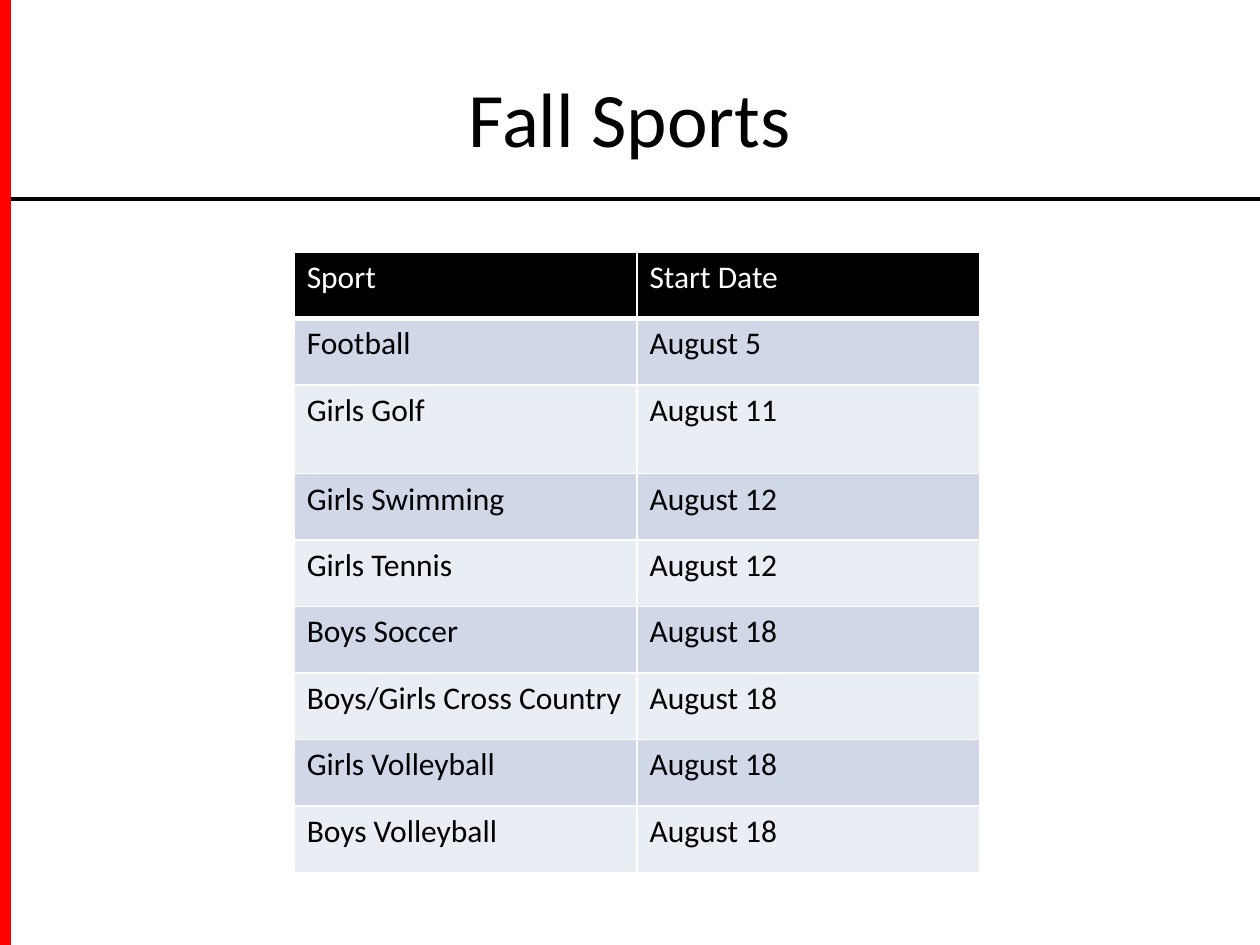
import pptx
import pptx.dml.color
import pptx.enum.shapes
import pptx.enum.text
import pptx.oxml
import pptx.oxml.ns
import pptx.util
from pptx.util import Cm

COLORS = {"black": "000000", "white": "FFFFFF", "red": "FF0000",
          "band_dark": "D0D8E8", "band_light": "E9EDF4"}
SPORTS = [
    ("Sport", "Start Date"),
    ("Football", "August 5"),
    ("Girls Golf", "August 11"),
    ("Girls Swimming", "August 12"),
    ("Girls Tennis", "August 12"),
    ("Boys Soccer", "August 18"),
    ("Boys/Girls Cross Country", "August 18"),
    ("Girls Volleyball", "August 18"),
    ("Boys Volleyball", "August 18"),
]
ROW_HEIGHT, GOLF_HEIGHT, COLUMN_WIDTH = Cm(1.34), Cm(1.79), Cm(6.91)


def format_text(para, size, color):
    for name, value in {"name": "Calibri", "size": pptx.util.Pt(size), "bold": False}.items():
        setattr(para.font, name, value)
    para.font.color.rgb = pptx.dml.color.RGBColor.from_string(COLORS[color])


def add_border(cell, side, points):
    """Draw one white edge; side is L, R, T or B."""
    cell._tc.get_or_add_tcPr().append(pptx.oxml.parse_xml(
        f'<a:ln{side} {pptx.oxml.ns.nsdecls("a")} w="{pptx.util.Pt(points)}">'
        f'<a:solidFill><a:srgbClr val="{COLORS["white"]}"/></a:solidFill></a:ln{side}>'))


deck = pptx.Presentation()
deck.slide_width, deck.slide_height = Cm(25.4), Cm(19.05)
page = deck.slides.add_slide(deck.slide_layouts[5])

title = page.shapes.title
for name, value in {"left": Cm(1.27), "top": Cm(0.76),
                    "width": Cm(22.86), "height": Cm(3.18)}.items():
    setattr(title, name, value)
title.text_frame.text = "Fall Sports"
title.text_frame.vertical_anchor = pptx.enum.text.MSO_ANCHOR.MIDDLE
title.text_frame.paragraphs[0].alignment = pptx.enum.text.PP_ALIGN.CENTER
format_text(title.text_frame.paragraphs[0], 44, "black")

# Black rule under the title, then the red bar on the left edge
for ends, color, points in [
    ((Cm(0), Cm(4.01), deck.slide_width, Cm(4.01)), "black", 2.5),
    ((Cm(0.05), Cm(0), Cm(0.05), deck.slide_height), "red", 10),
]:
    rule = page.shapes.add_connector(pptx.enum.shapes.MSO_CONNECTOR.STRAIGHT, *ends)
    rule.line.color.rgb = pptx.dml.color.RGBColor.from_string(COLORS[color])
    rule.line.width = pptx.util.Pt(points)
    rule._element.spPr.append(pptx.oxml.parse_xml(
        f'<a:effectLst {pptx.oxml.ns.nsdecls("a")}/>'))

table = page.shapes.add_table(
    len(SPORTS), 2, Cm(5.93), Cm(5.08),
    2 * COLUMN_WIDTH, (len(SPORTS) - 1) * ROW_HEIGHT + GOLF_HEIGHT).table
for column in table.columns:
    column.width = COLUMN_WIDTH

for number, texts in enumerate(SPORTS):
    is_header = number == 0
    table.rows[number].height = GOLF_HEIGHT if texts[0] == "Girls Golf" else ROW_HEIGHT
    band = "black" if is_header else "band_dark" if number % 2 else "band_light"
    for cell, text in zip(table.rows[number].cells, texts):
        cell.text = text
        format_text(cell.text_frame.paragraphs[0], 18, "white" if is_header else "black")
        for side in "LRTB":
            add_border(cell, side, 3 if is_header and side == "B" else 1)
        cell.fill.solid()
        cell.fill.fore_color.rgb = pptx.dml.color.RGBColor.from_string(COLORS[band])

deck.save("out.pptx")
